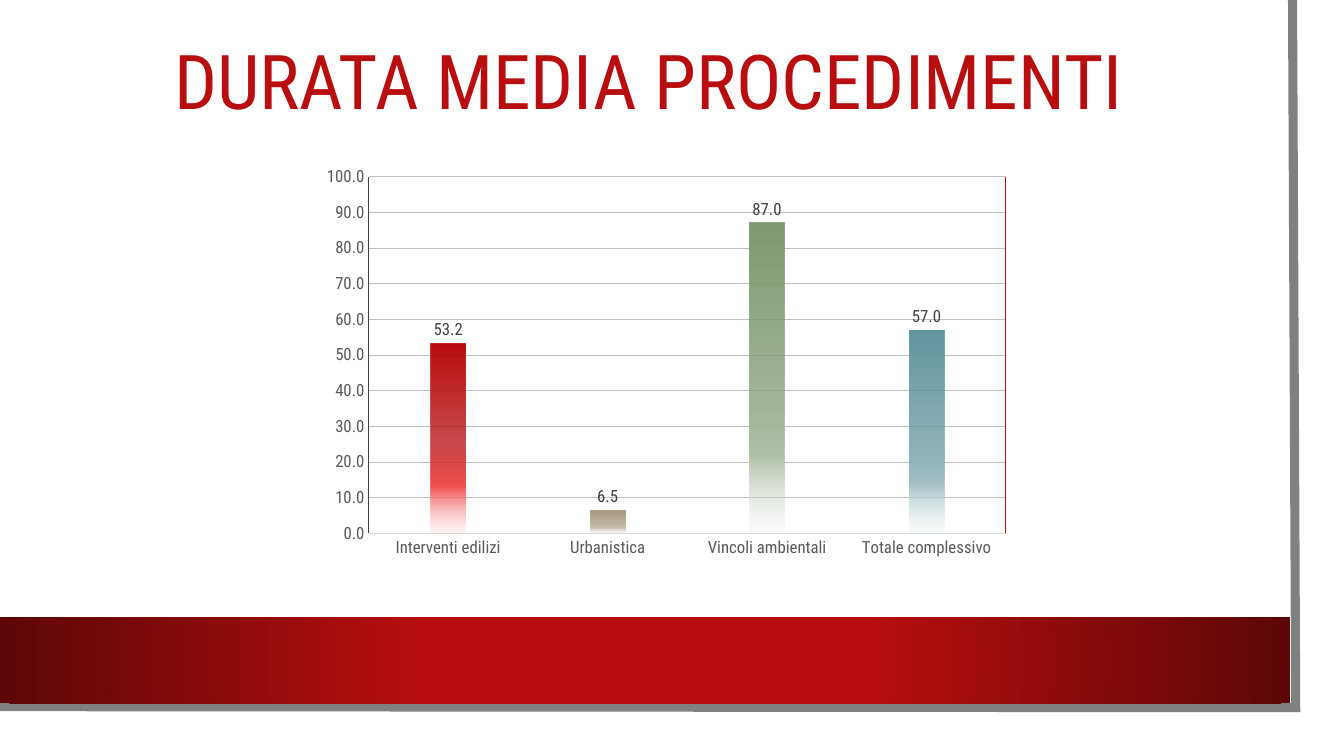
"""Builds a slide with a column chart of average procedure durations."""
import lxml.etree
import pptx
import pptx.chart.data
import pptx.dml.color
import pptx.enum.chart
import pptx.enum.shapes
import pptx.enum.text
import pptx.oxml.ns
import pptx.util

PX = 9525
FONT = "Roboto Condensed"
RED = "B80E0F"
DURATIONS = [
    ("Interventi edilizi", 53.2, (RED, "F25152", "FBC5C5")),
    ("Urbanistica", 6.5, ("A6987D", "CAC1B1", "EDEAE5")),
    ("Vincoli ambientali", 87, ("7F9A71", "B2C2AA", "E5EBE3")),
    ("Totale complessivo", 57, ("64969F", "A2C0C5", "E0EAEC")),
]


def color(value):
    """Return the colour for a hex string."""
    return pptx.dml.color.RGBColor.from_string(value)


def place(*lengths):
    """Turn pixel lengths into EMU."""
    return [length * PX for length in lengths]


def add_element(parent, tag, **attributes):
    """Append a namespaced XML element with attributes."""
    element = lxml.etree.SubElement(parent, pptx.oxml.ns.qn(tag))
    for name, value in attributes.items():
        element.set(name, str(value))
    return element


def set_line(line, value, width):
    """Give a line its colour and width in points."""
    line.color.rgb = color(value)
    line.width = pptx.util.Pt(width)


def set_font(font, size, value):
    """Give a font its face, size and colour."""
    font.name = FONT
    font.size = pptx.util.Pt(size)
    font.color.rgb = color(value)


def set_gradient(properties, stops, radial=False):
    """Rebuild a gradient from position, colour and opacity stops."""
    gradient = properties.find(pptx.oxml.ns.qn("a:gradFill"))
    gradient.clear()
    gradient.set("rotWithShape", "1")
    stop_list = add_element(gradient, "a:gsLst")
    for position, value, opacity in stops:
        stop = add_element(stop_list, "a:gs", pos=position * 1000)
        tint = add_element(stop, "a:srgbClr", val=value)
        if opacity < 100:
            add_element(tint, "a:alpha", val=opacity * 1000)
    if radial:
        circle = add_element(gradient, "a:path", path="circle")
        add_element(circle, "a:fillToRect", l=50000, t=50000, r=50000, b=50000)
    else:
        add_element(gradient, "a:lin", ang=5400000, scaled=0)


def add_page_edge(page):
    """Draw the grey edge along the right and bottom sides."""
    builder = page.shapes.build_freeform(1231, 0, scale=PX)
    builder.add_line_segments([(1234, 674), (-3, 673)], close=False)
    edge = builder.convert_to_shape()
    edge.shadow.inherit = False
    edge.fill.background()
    set_line(edge.line, "808080", 6.5)
    add_element(edge.line._get_or_add_ln(), "a:miter", lim=800000)


def add_band(page):
    """Draw the red band at the foot of the slide."""
    band = page.shapes.add_shape(
        pptx.enum.shapes.MSO_SHAPE.RECTANGLE, *place(0, 588, 1229, 82))
    band.shadow.inherit = False
    band.line.fill.background()
    band.fill.gradient()
    set_gradient(band.element.spPr, [(34, RED, 100), (100, "5C0707", 100)], radial=True)


def add_title(page, text):
    """Move, fill and format the title placeholder."""
    title = page.shapes.title
    title.left, title.top, title.width, title.height = place(72, 20, 1092, 121)
    frame = title.text_frame
    frame.word_wrap = True
    frame.vertical_anchor = pptx.enum.text.MSO_ANCHOR.MIDDLE
    para = frame.paragraphs[0]
    para.alignment = pptx.enum.text.PP_ALIGN.CENTER
    para.line_spacing = 0.9
    span = para.add_run()
    span.text = text
    set_font(span.font, 54, RED)


def format_axes(chart):
    """Format both axes and the gridlines."""
    for axis in (chart.category_axis, chart.value_axis):
        axis.major_tick_mark = pptx.enum.chart.XL_TICK_MARK.NONE
        axis.minor_tick_mark = pptx.enum.chart.XL_TICK_MARK.NONE
        set_font(axis.tick_labels.font, 12, "595959")
    set_line(chart.category_axis.format.line, "D9D9D9", 0.75)
    values = chart.value_axis
    values.minimum_scale, values.maximum_scale, values.major_unit = 0, 100, 10
    values.tick_labels.number_format = "0.0"
    values.tick_labels.number_format_is_linked = False
    set_line(values.format.line, "404040", 0.75)
    set_line(values.major_gridlines.format.line, "BFBFBF", 0.75)


def format_columns(chart):
    """Format the columns and their value labels."""
    plot = chart.plots[0]
    plot.vary_by_categories = False
    plot.gap_width, plot.overlap = 355, -70
    plot.has_data_labels = True
    labels = plot.data_labels
    labels.show_value = True
    labels.position = pptx.enum.chart.XL_LABEL_POSITION.OUTSIDE_END
    labels.number_format = "0.0"
    labels.number_format_is_linked = False
    set_font(labels.font, 12, "404040")
    series = plot.series[0]
    series.invert_if_negative = False
    for index, (_, _, (base, middle, pale)) in enumerate(DURATIONS):
        series.points[index].format.fill.gradient()
        properties = chart.element.xpath("//c:dPt/c:spPr")[index]
        set_gradient(properties, [
            (0, base, 100), (51, base, 75), (75, middle, 100), (100, pale, 15)])


def set_plot_area(chart, **fractions):
    """Fix the inner plot area as fractions of the chart."""
    area = chart.element.xpath("//c:plotArea")[0]
    for previous in area.findall(pptx.oxml.ns.qn("c:layout")):
        area.remove(previous)
    layout = add_element(area, "c:layout")
    area.insert(0, layout)
    manual = add_element(layout, "c:manualLayout")
    add_element(manual, "c:layoutTarget", val="inner")
    for name in ("xMode", "yMode"):
        add_element(manual, f"c:{name}", val="edge")
    for name, fraction in fractions.items():
        add_element(manual, f"c:{name}", val=fraction)


def add_duration_chart(page):
    """Add the column chart of durations."""
    data = pptx.chart.data.CategoryChartData()
    data.categories = [name for name, _, _ in DURATIONS]
    data.add_series("Series 1", [value for _, value, _ in DURATIONS])
    chart = page.shapes.add_chart(
        pptx.enum.chart.XL_CHART_TYPE.COLUMN_CLUSTERED,
        *place(297, 153, 675, 386), data).chart
    chart.has_title = False
    chart.has_legend = False
    set_font(chart.font, 10, "000000")
    format_axes(chart)
    format_columns(chart)
    set_plot_area(chart, x=0.08, y=0.04, w=0.9, h=0.88)


def add_line(page, ends, value, width):
    """Add a straight line without a shadow."""
    line = page.shapes.add_connector(
        pptx.enum.shapes.MSO_CONNECTOR.STRAIGHT, *place(*ends))
    set_line(line.line, value, width)
    add_element(line.element.spPr, "a:effectLst")


def main():
    """Build and save the deck."""
    deck = pptx.Presentation()
    deck.slide_width, deck.slide_height = place(1280, 720)
    page = deck.slides.add_slide(deck.slide_layouts[5])
    add_page_edge(page)
    add_band(page)
    add_title(page, "DURATA MEDIA PROCEDIMENTI")
    add_duration_chart(page)
    add_line(page, (958, 169, 958, 508), RED, 0.75)
    deck.save("out.pptx")


if __name__ == "__main__":
    main()
